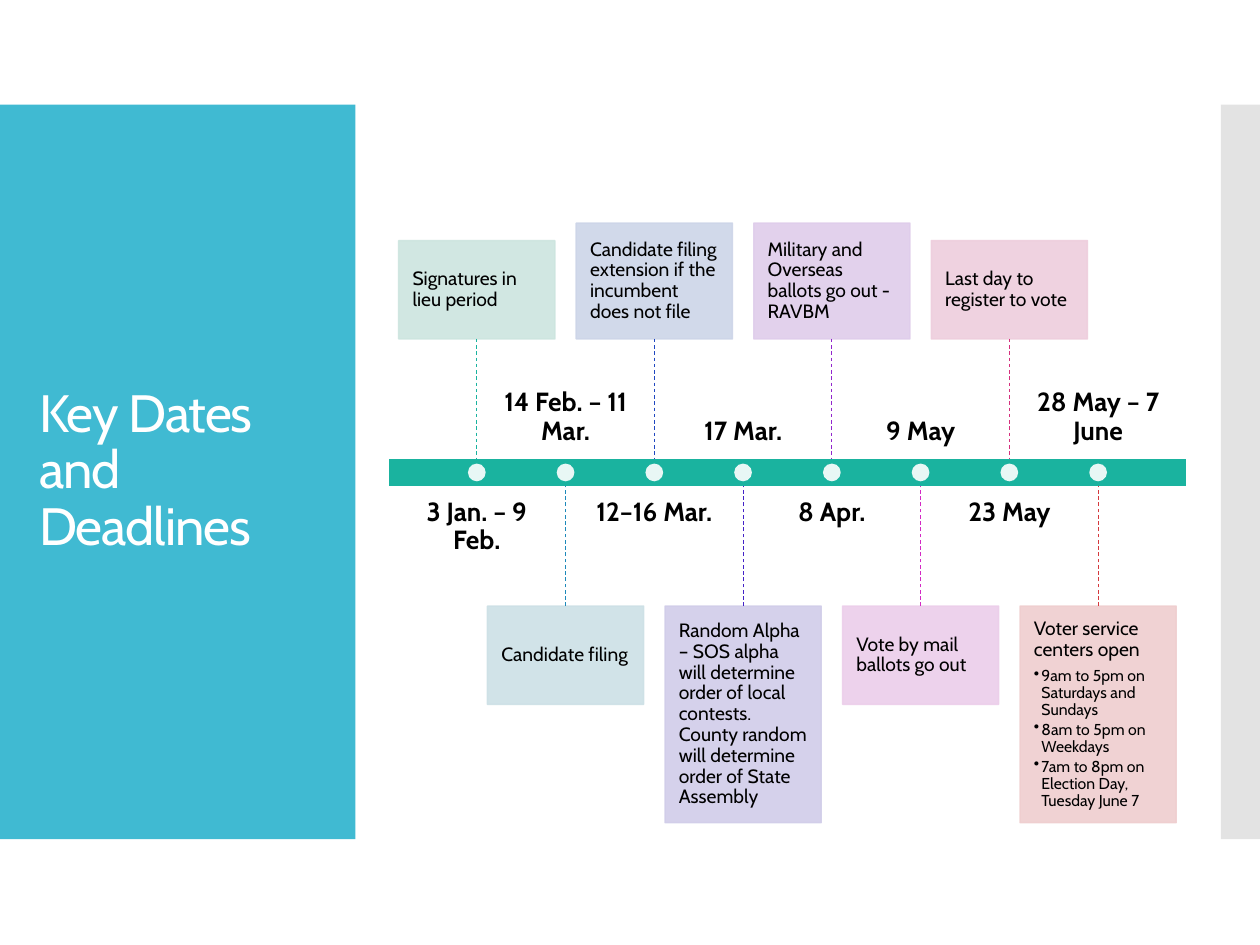
"""Build the slide with the timeline of key dates and deadlines."""
from dataclasses import dataclass

from lxml import etree
from pptx import Presentation
from pptx.dml.color import RGBColor
from pptx.enum.dml import MSO_LINE
from pptx.enum.shapes import MSO_CONNECTOR, MSO_SHAPE
from pptx.enum.text import MSO_ANCHOR, MSO_AUTO_SIZE, PP_ALIGN
from pptx.oxml.ns import qn
from pptx.util import Emu, Inches, Pt

RECTANGLE, OVAL = MSO_SHAPE.RECTANGLE, MSO_SHAPE.OVAL
STRAIGHT, DASH = MSO_CONNECTOR.STRAIGHT, MSO_LINE.DASH
TOP, MIDDLE, BOTTOM = MSO_ANCHOR.TOP, MSO_ANCHOR.MIDDLE, MSO_ANCHOR.BOTTOM
LEFT, CENTER = PP_ALIGN.LEFT, PP_ALIGN.CENTER
TOP_SIDE, BOTTOM_SIDE = 0, 2

FONT = "Cabin"
WHITE = RGBColor(0xFF, 0xFF, 0xFF)
BLACK = RGBColor(0x00, 0x00, 0x00)
PANEL_BLUE = RGBColor(0x40, 0xBA, 0xD2)
EDGE_GREY = RGBColor(0xC8, 0xC8, 0xC8)
BAR_GREEN = RGBColor(0x1A, 0xB3, 0x9F)

BAR_LEFT, BAR_TOP = Inches(3.08), Inches(3.64)
BAR_WIDTH, BAR_HEIGHT = Inches(6.34), Inches(0.22)
BAR_BOTTOM, BAR_MIDDLE = BAR_TOP + BAR_HEIGHT, BAR_TOP + BAR_HEIGHT // 2
STEM_LENGTH = Inches(0.95)
COLUMN = BAR_WIDTH / 9
CARD_WIDTH, LABEL_WIDTH, DOT_SIZE = (int(COLUMN * share) for share in (1.76, 1.6, 0.2))
LABEL_HEIGHT, LABEL_GAP = Inches(0.63), Inches(0.1)
CARD_INSET, BULLET_INDENT = Inches(0.11), Inches(0.06)
SHORT, MEDIUM, TALL = Inches(0.78), Inches(0.92), Inches(1.72)


@dataclass(frozen=True)
class Milestone:
    """A date with its card; even positions have the card above the bar."""

    date: str
    text: str
    height: int
    fill: str
    stem: str
    bullets: tuple[str, ...] = ()


@dataclass(frozen=True)
class TextStyle:
    """The look of one paragraph."""

    size: float
    color: RGBColor = BLACK
    bold: bool = False
    alignment: int = LEFT
    space_after: float = 0


TITLE_STYLE = TextStyle(30, WHITE)
DATE_STYLE = TextStyle(15, bold=True, alignment=CENTER, space_after=5)
CARD_STYLE = TextStyle(11, space_after=4)
BULLET_STYLE = TextStyle(9, space_after=1.5)

MILESTONES = (
    Milestone("3 Jan. – 9 Feb.", "Signatures in lieu period", SHORT, "CDE5DF", "1AB39F"),
    Milestone("14 Feb. – 11 Mar.", "Candidate filing", SHORT, "CDE0E6", "1D89BA"),
    Milestone("12–16 Mar.", "Candidate filing extension if the incumbent does not file",
              MEDIUM, "CDD5E8", "1F47C0"),
    Milestone("17 Mar.", "Random Alpha – SOS alpha will determine order of local contests. "
              "County random will determine order of State Assembly",
              TALL, "D1CDE9", "4322C7"),
    Milestone("8 Apr.", "Military and Overseas ballots go out - RAVBM",
              MEDIUM, "DFCDEB", "9125CD"),
    Milestone("9 May", "Vote by mail ballots go out", SHORT, "ECCEEA", "D329C4"),
    Milestone("23 May", "Last day to register to vote", SHORT, "EECEDD", "D5307D"),
    Milestone("28 May – 7 June", "Voter service centers open", TALL, "EFCECF", "D5393D",
              ("9am to 5pm on Saturdays and Sundays", "8am to 5pm on Weekdays",
               "7am to 8pm on Election Day, Tuesday June 7")),
)


def apply_format(target, values: dict) -> None:
    """Set each named attribute on the target."""
    for name, value in values.items():
        setattr(target, name, value)


def format_frame(frame, anchor, inset: int) -> None:
    """Set wrapping, anchor and equal margins of a text frame."""
    apply_format(frame, {
        "word_wrap": True, "auto_size": MSO_AUTO_SIZE.NONE, "vertical_anchor": anchor,
        "margin_left": inset, "margin_right": inset,
        "margin_top": inset, "margin_bottom": inset,
    })


def write(paragraph, text: str, style: TextStyle):
    """Write styled text into a paragraph and return its run."""
    apply_format(paragraph, {"alignment": style.alignment, "line_spacing": 0.9,
                             "space_before": Pt(0), "space_after": Pt(style.space_after)})
    run = paragraph.add_run()
    run.text = text
    apply_format(run.font, {"name": FONT, "size": Pt(style.size), "bold": style.bold})
    run.font.color.rgb = style.color
    return run


def add_bullet(frame, text: str) -> None:
    """Add a bulleted paragraph with a hanging indent."""
    paragraph = frame.add_paragraph()
    paragraph.level = 1
    write(paragraph, text, BULLET_STYLE)
    properties = paragraph._p.get_or_add_pPr()
    properties.set("marL", str(BULLET_INDENT))
    properties.set("indent", str(-BULLET_INDENT))
    etree.SubElement(properties, qn("a:buChar"), char="•")


def add_block(slide, kind, left: int, top: int, width: int, height: int,
              fill: RGBColor, opacity: int = 100, outline: RGBColor | None = None):
    """Add a filled shape, with an outline if a colour is given."""
    shape = slide.shapes.add_shape(kind, Emu(left), Emu(top), Emu(width), Emu(height))
    shape.shadow.inherit = False
    shape.fill.solid()
    shape.fill.fore_color.rgb = fill
    if outline is None:
        shape.line.fill.background()
    else:
        shape.line.color.rgb = outline
        shape.line.width = Pt(0.85)
    if opacity < 100:
        for color in shape._element.spPr.iter(qn("a:srgbClr")):
            etree.SubElement(color, qn("a:alpha"), val=str(opacity * 1000))
    return shape


def add_stem(slide, card, side: int, center: int, bar_edge: int, color: RGBColor) -> None:
    """Join a card to the edge of the bar with a dashed line."""
    stem = slide.shapes.add_connector(STRAIGHT, center, bar_edge, center, bar_edge)
    stem.begin_connect(card, side)
    stem.line.color.rgb = color
    apply_format(stem.line, {"width": Pt(0.5), "dash_style": DASH})
    etree.SubElement(stem._element.spPr, qn("a:effectLst"))


def add_milestone(slide, position: int, milestone: Milestone) -> None:
    """Draw the card, stem, date and dot of one milestone."""
    center = int(BAR_LEFT + COLUMN * (position + 1))
    if position % 2 == 0:
        card_top, side, bar_edge = BAR_TOP - STEM_LENGTH - milestone.height, BOTTOM_SIDE, BAR_TOP
        label_top, label_anchor = BAR_BOTTOM + LABEL_GAP, TOP
    else:
        card_top, side, bar_edge = BAR_BOTTOM + STEM_LENGTH, TOP_SIDE, BAR_BOTTOM
        label_top, label_anchor = BAR_TOP - LABEL_GAP - LABEL_HEIGHT, BOTTOM
    fill = RGBColor.from_string(milestone.fill)
    card = add_block(slide, RECTANGLE, center - CARD_WIDTH // 2, card_top,
                     CARD_WIDTH, milestone.height, fill, 90, fill)
    format_frame(card.text_frame, MIDDLE, CARD_INSET)
    write(card.text_frame.paragraphs[0], milestone.text, CARD_STYLE)
    for bullet in milestone.bullets:
        add_bullet(card.text_frame, bullet)
    add_stem(slide, card, side, center, bar_edge, RGBColor.from_string(milestone.stem))
    label = slide.shapes.add_textbox(center - LABEL_WIDTH // 2, label_top,
                                     LABEL_WIDTH, LABEL_HEIGHT)
    format_frame(label.text_frame, label_anchor, 0)
    write(label.text_frame.paragraphs[0], milestone.date, DATE_STYLE)
    add_block(slide, OVAL, center - DOT_SIZE // 2, BAR_MIDDLE - DOT_SIZE // 2,
              DOT_SIZE, DOT_SIZE, WHITE, 90)


def add_title(slide, text: str) -> None:
    """Place the title placeholder in front of the side panel."""
    title = slide.shapes.title
    apply_format(title, {"left": Inches(0.21), "top": Inches(1.23),
                         "width": Inches(2.42), "height": Inches(5.03)})
    format_frame(title.text_frame, MIDDLE, Inches(0.1))
    run = write(title.text_frame.paragraphs[0], text, TITLE_STYLE)
    run.font._element.set("spc", "-60")
    slide.shapes._spTree.append(title._element)


def main() -> None:
    """Build and save the presentation."""
    presentation = Presentation()
    apply_format(presentation, {"slide_width": Inches(10), "slide_height": Inches(7.5)})
    slide = presentation.slides.add_slide(presentation.slide_layouts[5])
    panel_top, panel_height = Inches(0.83), Inches(5.83)
    add_block(slide, RECTANGLE, 0, panel_top, Inches(2.82), panel_height, PANEL_BLUE)
    add_block(slide, RECTANGLE, Inches(9.69), panel_top, Inches(0.31), panel_height,
              EDGE_GREY, 50)
    add_title(slide, "Key Dates and Deadlines")
    add_block(slide, RECTANGLE, BAR_LEFT, BAR_TOP, BAR_WIDTH, BAR_HEIGHT, BAR_GREEN,
              outline=WHITE)
    for position, milestone in enumerate(MILESTONES):
        add_milestone(slide, position, milestone)
    presentation.save("out.pptx")


if __name__ == "__main__":
    main()
